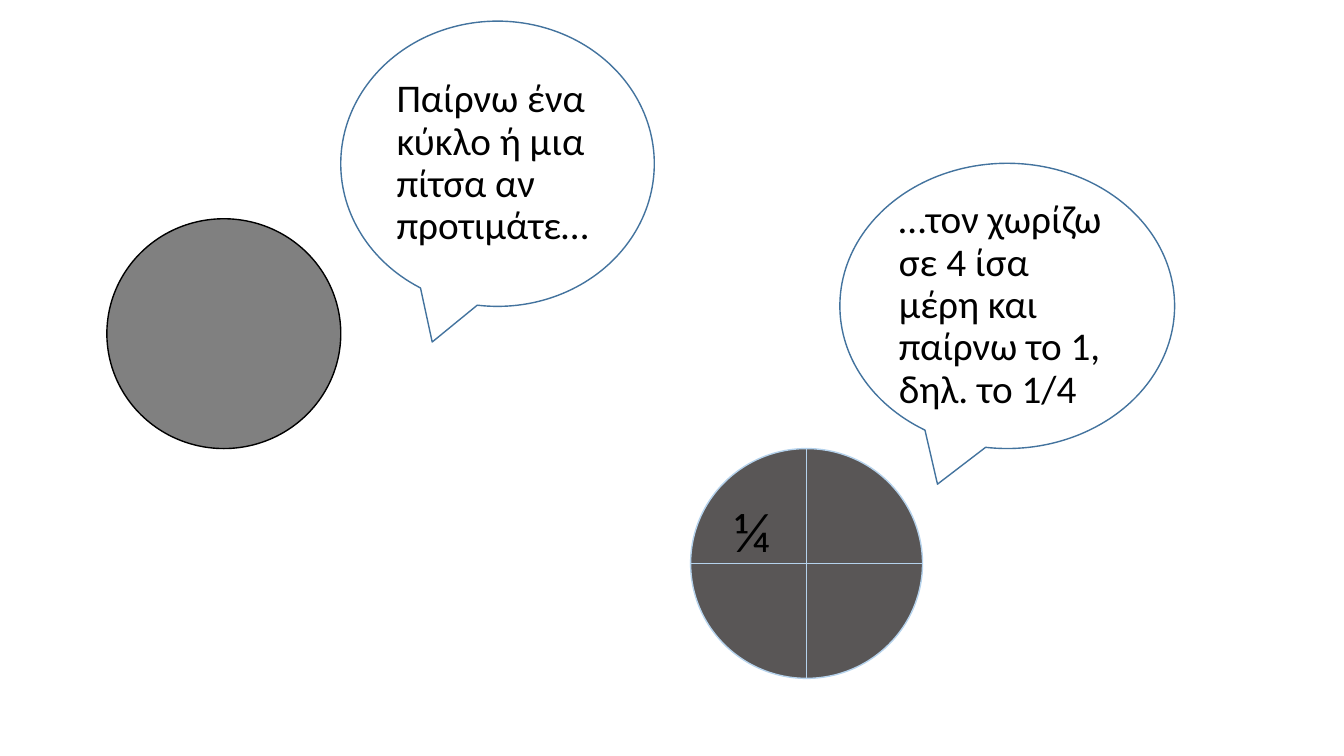
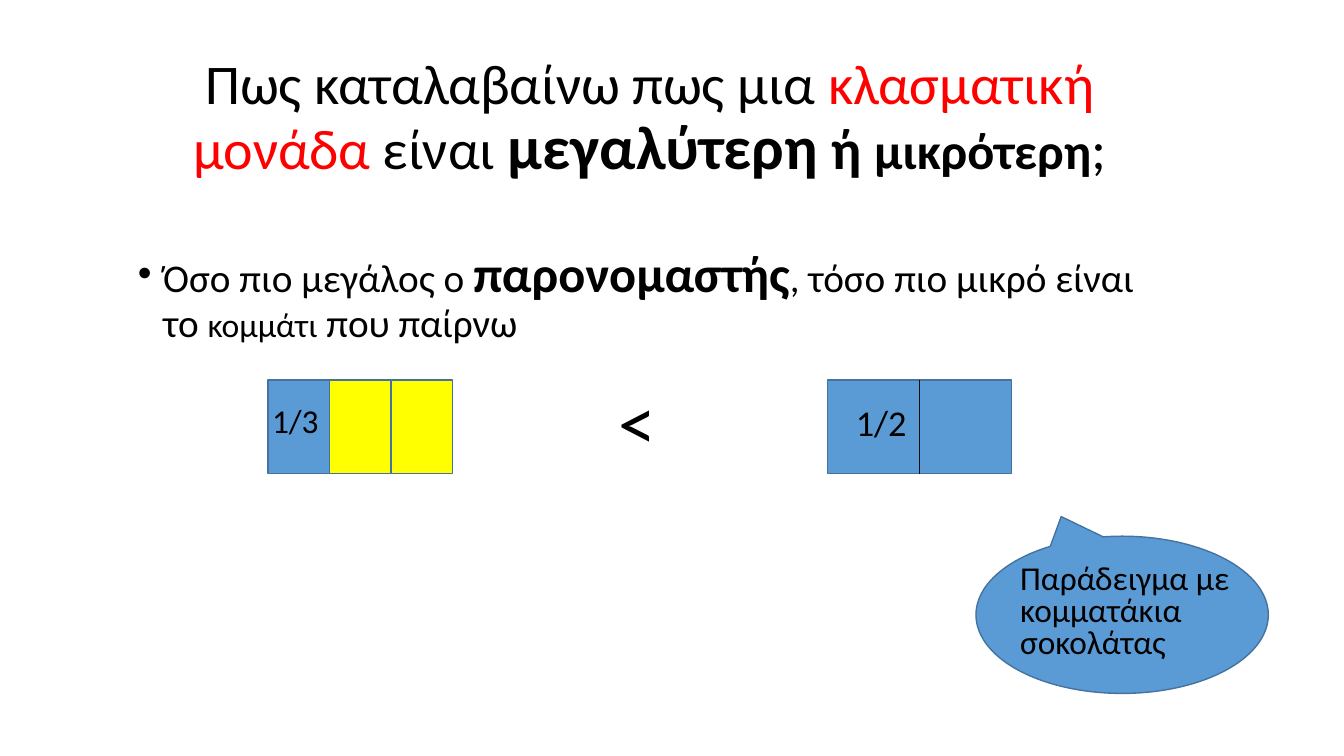
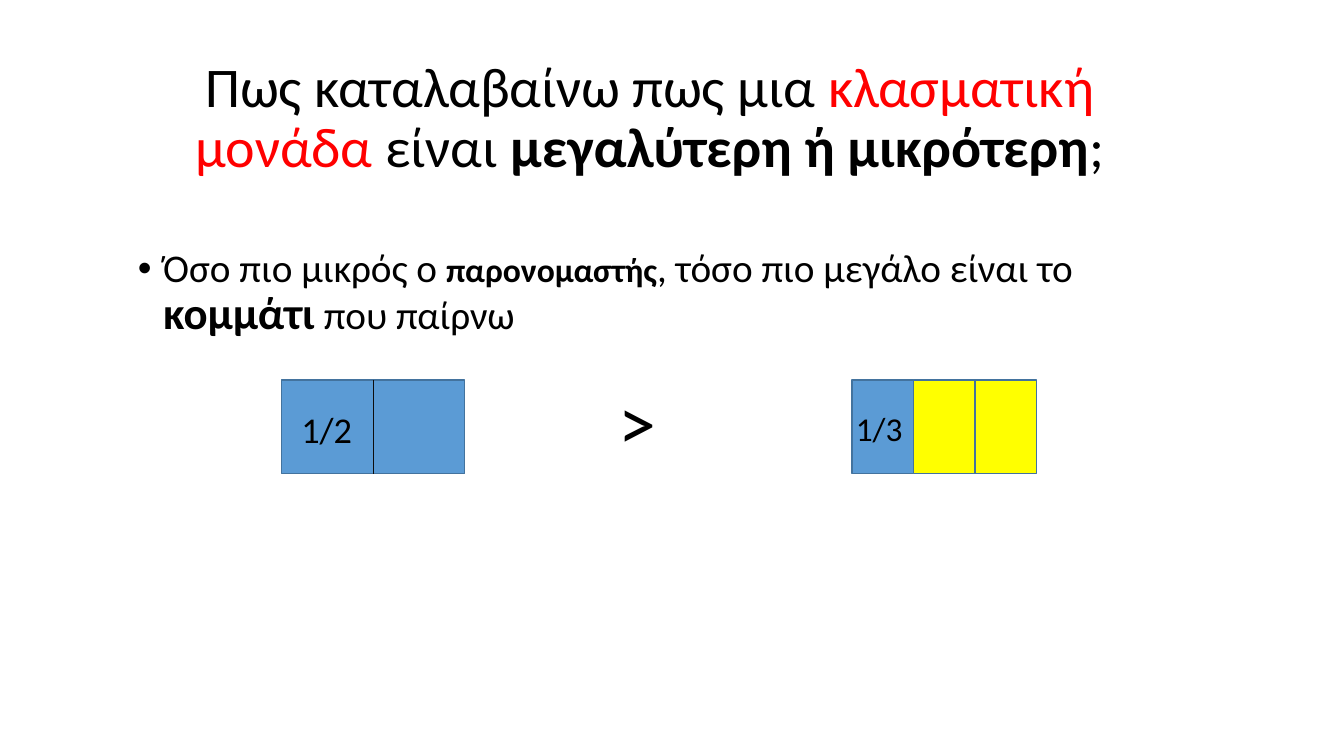
"""Build three Greek slides on comparing unit fractions."""
from pptx import Presentation
from pptx.dml.color import RGBColor
from pptx.enum.shapes import MSO_CONNECTOR as Connector, MSO_SHAPE as Shape
from pptx.enum.text import MSO_ANCHOR as Anchor, PP_ALIGN as Align
from pptx.oxml.ns import qn
from pptx.util import Pt
from lxml.etree import SubElement

PX = 9144
FONT = "Calibri"
BLACK, WHITE, RED, YELLOW = "000000", "FFFFFF", "FF0000", "FFFF00"
BLUE, OUTLINE, DIVIDER = "5B9BD5", "43739E", "0D0D0D"
GREY, DARK_GREY, PALE_BLUE = "808080", "595656", "B5D2EC"
TITLE_BOX, BODY_BOX = (127, 39, 1035, 159), (127, 242, 1035, 108)
SIGN_BOX = (555, 377, 154, 93)
BAR_TOP, BAR_HEIGHT, THIRD_WIDTH, HALF_WIDTH = 377, 93, 61, 91
color = RGBColor.from_string


def add_figure(slide, kind, box, fill, line=OUTLINE):
    shape = slide.shapes.add_shape(kind, *(length * PX for length in box))
    shape.shadow.inherit = False
    shape.fill.solid()
    shape.fill.fore_color.rgb = color(fill)
    shape.line.color.rgb = color(line)
    shape.line.width = Pt(1)
    return shape


def write(shape, runs, align=Align.LEFT, anchor=Anchor.TOP, spacing=0.9, before=10):
    frame = shape.text_frame
    frame.word_wrap = True
    frame.vertical_anchor = anchor
    paragraph = frame.paragraphs[0]
    paragraph.alignment = align
    paragraph.line_spacing = spacing
    paragraph.space_before = Pt(before)
    for text, size, bold, ink in runs:
        run = paragraph.add_run()
        run.text = text
        run.font.name = FONT
        run.font.size = Pt(size)
        run.font.bold = bold
        run.font.color.rgb = color(ink)
    return paragraph


presentation = Presentation()
presentation.slide_width = 1333 * PX
presentation.slide_height = 750 * PX
blank = presentation.slide_layouts[6]

slide = presentation.slides.add_slide(blank)
for box, text in (
    ((338, 21, 311, 283), "Παίρνω ένα κύκλο ή μια πίτσα αν προτιμάτε…"),
    ((833, 162, 332, 283), "…τον χωρίζω σε 4 ίσα μέρη και παίρνω το 1, δηλ. το 1/4"),
):
    callout = add_figure(slide, Shape.OVAL_CALLOUT, box, WHITE)
    write(callout, [(text, 28, False, BLACK)], anchor=Anchor.MIDDLE)
add_figure(slide, Shape.OVAL, (106, 217, 232, 228), GREY, BLACK)
quarters = add_figure(slide, Shape.FLOWCHART_OR, (685, 445, 230, 228), DARK_GREY, PALE_BLUE)
quarters.text_frame.margin_bottom = 62 * PX
write(quarters, [("¼", 40, False, BLACK)], anchor=Anchor.MIDDLE)

comparisons = [
    {
        "title": [("μεγαλύτερη", 44, True, BLACK), (" ή ", 40, True, BLACK),
                  ("μικρότερη", 36, True, BLACK)],
        "body": [("Όσο πιο μεγάλος ο ", 28, False, BLACK), ("παρονομαστής", 36, True, BLACK),
                 (", τόσο πιο μικρό είναι το ", 28, False, BLACK),
                 ("κομμάτι", 24, False, BLACK)],
        "sign": "<",
        "thirds": 266, "third_label": (260, 400),
        "halves": 821, "half_label": (839, 397),
    },
    {
        "title": [("μεγαλύτερη ή μικρότερη", 40, True, BLACK)],
        "body": [("Όσο πιο μικρός ο ", 28, False, BLACK), ("παρονομαστής", 24, True, BLACK),
                 (", τόσο πιο μεγάλο είναι το ", 28, False, BLACK),
                 ("κομμάτι", 32, True, BLACK)],
        "sign": ">",
        "thirds": 845, "third_label": (839, 408),
        "halves": 279, "half_label": (289, 404),
    },
]

for comparison in comparisons:
    slide = presentation.slides.add_slide(blank)
    title = slide.shapes.add_textbox(*(length * PX for length in TITLE_BOX))
    title_runs = [("Πως καταλαβαίνω πως μια ", 40, False, BLACK),
                  ("κλασματική μονάδα", 40, False, RED), (" είναι ", 40, False, BLACK),
                  *comparison["title"], (";", 40, False, BLACK)]
    write(title, title_runs, Align.CENTER, Anchor.MIDDLE, before=0)

    body = slide.shapes.add_textbox(*(length * PX for length in BODY_BOX))
    paragraph = write(body, [*comparison["body"], (" που παίρνω", 28, False, BLACK)])
    properties = paragraph._p.get_or_add_pPr()
    properties.set("marL", str(25 * PX))
    properties.set("indent", str(-25 * PX))
    SubElement(properties, qn("a:buFont"), typeface="Arial")
    SubElement(properties, qn("a:buChar"), char="•")

    for index, fill in enumerate((BLUE, YELLOW, YELLOW)):
        left = comparison["thirds"] + index * THIRD_WIDTH
        add_figure(slide, Shape.RECTANGLE, (left, BAR_TOP, THIRD_WIDTH, BAR_HEIGHT), fill)
    left = comparison["halves"]
    add_figure(slide, Shape.RECTANGLE, (left, BAR_TOP, 2 * HALF_WIDTH, BAR_HEIGHT), BLUE)
    middle = left + HALF_WIDTH
    ends = (middle, BAR_TOP, middle, BAR_TOP + BAR_HEIGHT)
    divider = slide.shapes.add_connector(Connector.STRAIGHT, *(length * PX for length in ends))
    divider.line.color.rgb = color(DIVIDER)
    divider.line.width = Pt(0.5)
    SubElement(divider._element.spPr, qn("a:effectLst"))

    sign = slide.shapes.add_textbox(*(length * PX for length in SIGN_BOX))
    write(sign, [(comparison["sign"], 54, False, BLACK)], Align.CENTER)
    for text, place, extent, size, spacing in (
        ("1/3", comparison["third_label"], (67, 57), 23.8, 0.8),
        ("1/2", comparison["half_label"], (73, 63), 25.9, 0.9),
    ):
        label = slide.shapes.add_textbox(*(length * PX for length in place + extent))
        label.text_frame.margin_right = 0
        write(label, [(text, size, False, BLACK)], spacing=spacing)

slide = presentation.slides[1]
callout = add_figure(slide, Shape.OVAL_CALLOUT, (968, 532, 290, 156), BLUE)
callout.adjustments[1] = -0.625
example = slide.shapes.add_textbox(*(length * PX for length in (1002, 556, 231, 108)))
write(example, [("Παράδειγμα με κομματάκια σοκολάτας", 23.8, False, BLACK)], spacing=0.8)

presentation.save("out.pptx")
